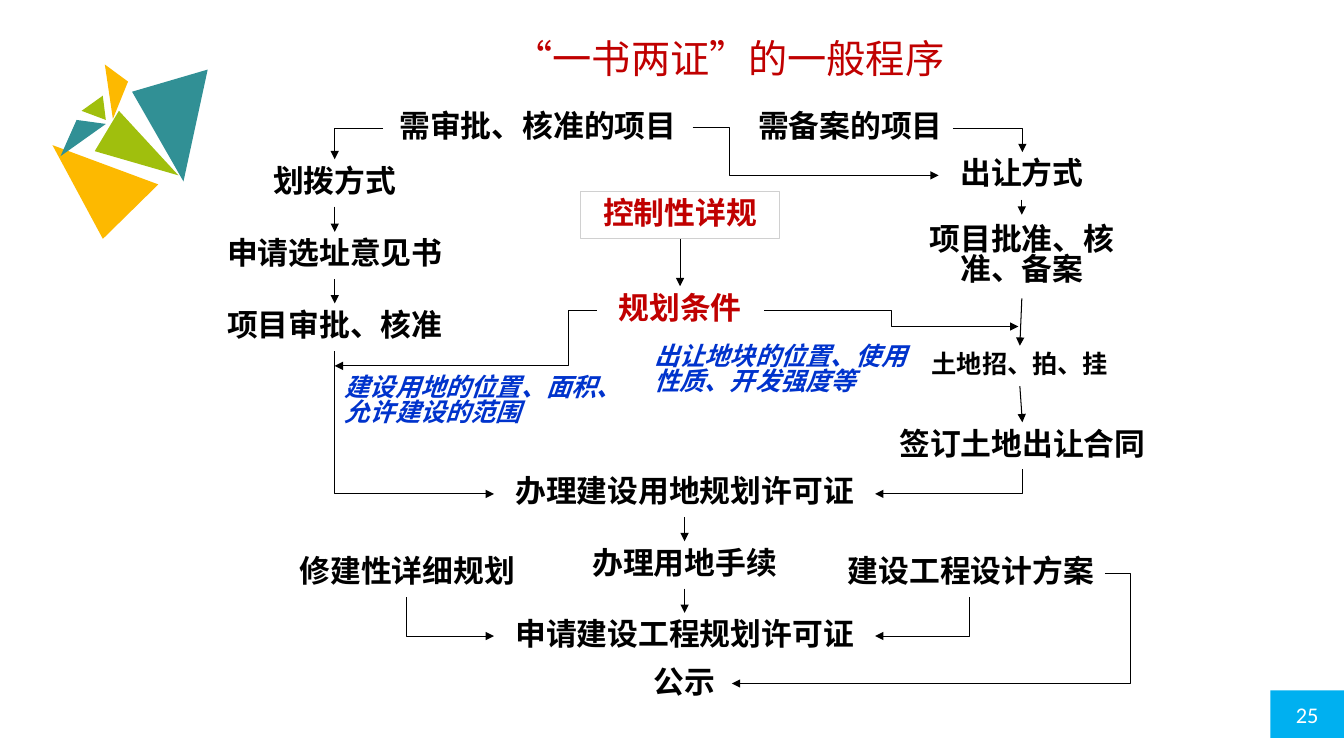
from lxml import etree
from pptx import Presentation
from pptx import util as u
from pptx.dml.color import RGBColor
from pptx.enum import shapes, text
from pptx.oxml import ns

FONT = "Noto Sans CJK KR"
BLACK, RED, BLUE, WHITE = "000000", "C00000", "0033CC", "FFFFFF"
TEAL, GREEN, AMBER = "319095", "A0BF0D", "FDB900"

TRIANGLES = [
    (TEAL, [(2.06, 0.69), (1.82, 1.8), (1.31, 0.91)]),
    (GREEN, [(1.18, 1.1), (1.77, 1.74), (0.94, 1.5)]),
    (AMBER, [(1.02, 2.37), (1.57, 1.83), (0.52, 1.44)]),
    (TEAL, [(0.6, 1.55), (1.05, 1.23), (0.76, 1.19)]),
    (GREEN, [(1.02, 0.95), (1.05, 1.19), (0.81, 1.1)]),
    (AMBER, [(1.27, 0.81), (1.12, 1.18), (1.04, 0.64)]),
]

# Steps of the procedure: wording, left, top, width, then format
STEPS = [
    ("需审批、核准的项目", 3.8, 1.04, 3.07, {}),
    ("需备案的项目", 7.41, 1.04, 2.05, {}),
    ("划拨方式", 2.53, 1.58, 1.58, {}),
    ("申请选址意见书", 2.06, 2.3, 2.52, {}),
    ("项目审批、核准", 2.06, 3.01, 2.52, {}),
    ("出让方式", 9.31, 1.51, 1.65, {}),
    ("项目批准、核准、备案", 8.99, 2.13, 2.29, {"height": 0.83}),
    ("土地招、拍、挂", 9.13, 3.43, 1.97, {"height": 0.4, "size": 18}),
    ("签订土地出让合同", 8.76, 4.19, 2.76, {}),
    ("控制性详规", 5.76, 1.9, 1.97, {"color": RED, "border": "D0D0D0"}),
    ("规划条件", 5.92, 2.84, 1.65, {"color": RED}),
    ("办理建设用地规划许可证", 4.9, 4.66, 3.78, {}),
    ("办理用地手续", 5.53, 5.37, 2.52, {}),
    ("申请建设工程规划许可证", 4.9, 6.08, 3.78, {}),
    ("修建性详细规划", 2.7, 5.45, 2.68, {}),
    ("建设工程设计方案", 8.29, 5.45, 2.68, {}),
    ("公示", 6.32, 6.55, 0.94, {}),
]

# Chains of steps joined from top to bottom by straight arrows
CHAINS = [
    ["划拨方式", "申请选址意见书", "项目审批、核准"],
    ["出让方式", "项目批准、核准、备案", "土地招、拍、挂", "签订土地出让合同"],
    ["控制性详规", "规划条件"],
    ["办理建设用地规划许可证", "办理用地手续", "申请建设工程规划许可证"],
]

# Elbows with one corner run level first: level end, upright end, arrow end
CORNERS = [
    ((3.8, 1.27), (3.32, 1.58), "tailEnd"),
    ((9.45, 1.28), (10.14, 1.51), "tailEnd"),
    ((4.9, 4.9), (3.32, 3.48), "headEnd"),
    ((8.68, 4.9), (10.14, 4.65), "headEnd"),
    ((4.9, 6.31), (4.03, 5.92), "headEnd"),
    ((8.68, 6.31), (9.62, 5.92), "headEnd"),
]

# Elbows with two corners: start, end, x of the upright part
STEPPED = [
    ((6.87, 1.27), (9.31, 1.74), 7.23),
    ((7.58, 3.08), (10.1, 3.24), 8.84),
    ((5.92, 3.08), (3.32, 3.63), 5.64),
    ((10.96, 5.69), (7.26, 6.78), 11.21),
]


def rgb(color):
    return RGBColor.from_string(color)


def write(box, words, size=22, color=BLACK, font=FONT, bold=False,
          italic=False, align="CENTER", spacing=0.82):
    frame = box.text_frame
    frame.word_wrap = True
    frame.vertical_anchor = text.MSO_ANCHOR.MIDDLE
    para = frame.paragraphs[0]
    para.alignment = getattr(text.PP_ALIGN, align)
    para.line_spacing = spacing
    span = para.add_run()
    span.text = words
    style = span.font
    style.size, style.name = u.Pt(size), font
    style.bold, style.italic = bold, italic
    style.color.rgb = rgb(color)
    props = span._r.get_or_add_rPr()
    props.set("lang", "zh-CN")
    east = etree.Element(ns.qn("a:ea"), typeface=FONT)
    props.find(ns.qn("a:latin")).addnext(east)


def label(page, words, left, top, width, height=0.47, border=None, **style):
    box = page.shapes.add_textbox(*map(u.Inches, (left, top, width, height)))
    if border:
        box.line.color.rgb = rgb(border)
        box.line.width = u.Pt(0.75)
    write(box, words, **style)
    return box


def triangle(page, color, points):
    corners = [(u.Inches(x), u.Inches(y)) for x, y in points]
    builder = page.shapes.build_freeform(*corners[0])
    builder.add_line_segments(corners[1:], close=True)
    piece = builder.convert_to_shape()
    piece.shadow.inherit = False
    piece.fill.solid()
    piece.fill.fore_color.rgb = rgb(color)
    piece.line.fill.background()


def arrow(page, start, end, kind="STRAIGHT", head="tailEnd"):
    line = page.shapes.add_connector(
        getattr(shapes.MSO_CONNECTOR, kind), *map(u.Inches, start + end))
    line.line.color.rgb = rgb(BLACK)
    line.line.width = u.Pt(0.75)
    etree.SubElement(line.line._get_or_add_ln(), ns.qn("a:" + head), type="triangle")
    etree.SubElement(line._element.spPr, ns.qn("a:effectLst"))
    return line


def link(page, upper, lower):
    line = arrow(page, (0, 0), (1, 1))
    line.begin_connect(upper, 2)
    line.end_connect(lower, 0)


def corner(page, level, upright, head):
    line = arrow(page, level, upright, "ELBOW", head)
    line._element.spPr.find(ns.qn("a:prstGeom")).set("prst", "bentConnector2")


def stepped(page, start, end, turn):
    line = arrow(page, start, end, "ELBOW")
    geometry = line._element.spPr.find(ns.qn("a:prstGeom"))
    guides = geometry.find(ns.qn("a:avLst"))
    if guides is None:
        guides = etree.SubElement(geometry, ns.qn("a:avLst"))
    share = round((turn - start[0]) / (end[0] - start[0]) * 100000)
    etree.SubElement(guides, ns.qn("a:gd"), name="adj1", fmla=f"val {share}")


def main():
    deck = Presentation()
    deck.slide_width, deck.slide_height = u.Inches(13.33), u.Inches(7.5)
    page = deck.slides.add_slide(deck.slide_layouts[5])

    # Title
    title = page.shapes.title
    title.left, title.top = u.Inches(2.73), u.Inches(0.26)
    title.width, title.height = u.Inches(9), u.Inches(0.62)
    write(title, "“一书两证”的一般程序", size=28, color=RED, font="Calibri", spacing=1)

    # Triangle ornament
    for color, points in TRIANGLES:
        triangle(page, color, points)

    # Steps
    steps = {words: label(page, words, left, top, width, bold=True, **style)
             for words, left, top, width, style in STEPS}

    # Remarks on the planning conditions
    remark = dict(height=0.71, size=18, color=BLUE, bold=True, italic=True, align="LEFT")
    label(page, "建设用地的位置、面积、允许建设的范围", 3.32, 3.63, 2.76, **remark)
    label(page, "出让地块的位置、使用性质、开发强度等", 6.39, 3.32, 2.84, **remark)

    # Arrows
    for chain in CHAINS:
        for upper, lower in zip(chain, chain[1:]):
            link(page, steps[upper], steps[lower])
    for ends in CORNERS:
        corner(page, *ends)
    for ends in STEPPED:
        stepped(page, *ends)

    # Page number
    badge = page.shapes.add_shape(
        shapes.MSO_SHAPE.RECTANGLE, *map(u.Inches, (12.6, 6.85, 0.73, 0.47)))
    badge.shadow.inherit = False
    badge.fill.solid()
    badge.fill.fore_color.rgb = rgb("00B0F0")
    badge.line.fill.background()
    write(badge, "25", size=16, color=WHITE, font="Calibri", spacing=1)

    deck.save("out.pptx")


if __name__ == "__main__":
    main()
